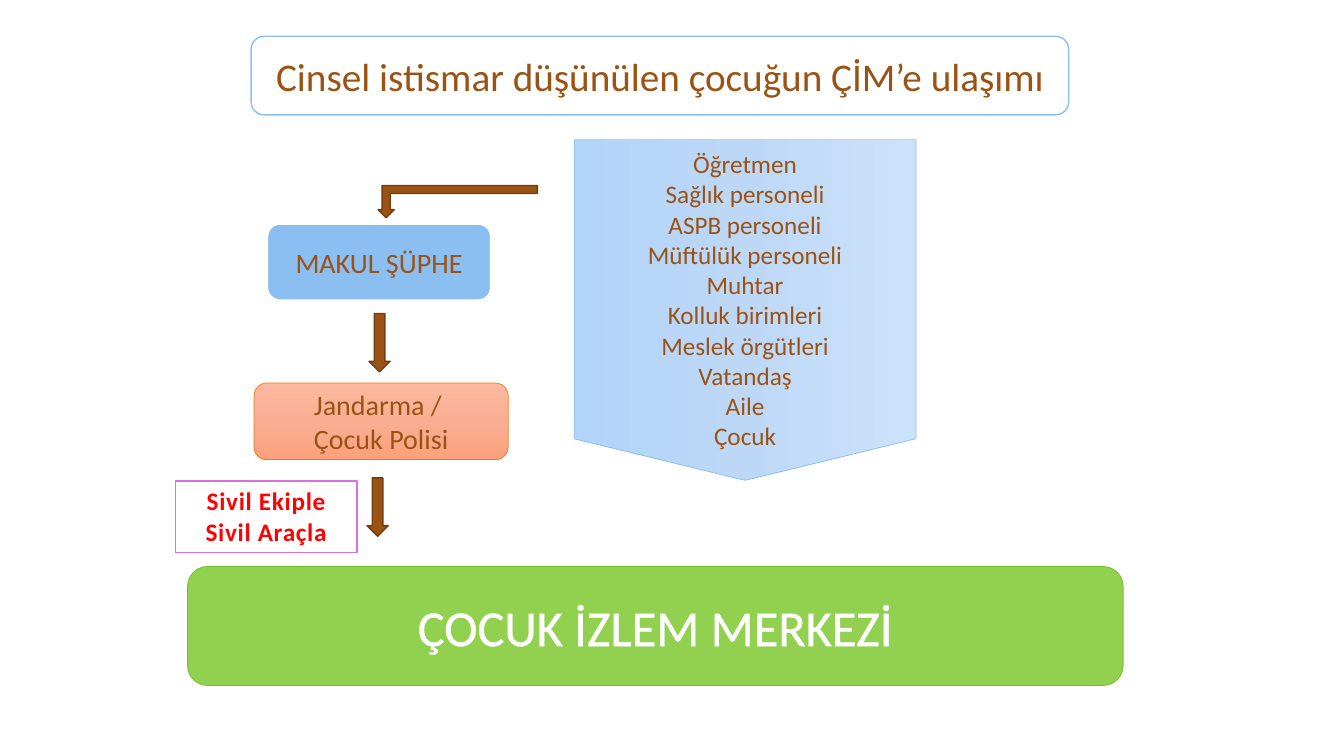
import copy

import pptx
import pptx.dml.color
import pptx.enum.shapes
import pptx.enum.text
import pptx.oxml
import pptx.oxml.ns
import pptx.util

Inches = pptx.util.Inches
Pt = pptx.util.Pt
Shape = pptx.enum.shapes.MSO_SHAPE
Anchor = pptx.enum.text.MSO_ANCHOR

# Content
TITLE = ["Cinsel istismar düşünülen çocuğun ÇİM’e ulaşımı"]
REPORTERS = [
    "Öğretmen", "Sağlık personeli", "ASPB personeli", "Müftülük personeli", "Muhtar",
    "Kolluk birimleri", "Meslek örgütleri", "Vatandaş", "Aile", "Çocuk",
]
SUSPICION = ["MAKUL ŞÜPHE"]
POLICE = ["Jandarma / ", "Çocuk Polisi"]
TRANSPORT = ["Sivil Ekiple", "Sivil Araçla"]
CENTRE = ["ÇOCUK İZLEM MERKEZİ"]

THEME = {
    "font": "Calibri",
    "brown": "9A5315", "dark brown": "723D10", "white": "FFFFFF", "red": "FF0000",
    "blue": "8BBEF1", "green": "92D050", "dark green": "6DC025",
    "orange": "F3771A", "violet": "DA6FDF",
    "blue fade": ("CCE2FA", "BDD8F7", "B2D4F9"),
    "orange fade": ("FBBAA0", "F9AE92", "FDA17D"),
    "title": 28, "step": 20, "list": 18, "centre": 36,
}


def rgb(name):
    return pptx.dml.color.RGBColor.from_string(THEME[name])


def fill_gradient(fill, colors):
    """Top-to-bottom gradient with three evenly spaced stops."""
    fill.gradient()
    fill.gradient_angle = 270
    first = fill.gradient_stops[0]._gs
    first.addnext(copy.deepcopy(first))
    for index, (stop, color) in enumerate(zip(fill.gradient_stops, colors)):
        stop.position = index / 2
        stop.color.rgb = pptx.dml.color.RGBColor.from_string(color)


def add_box(slide, preset, box, fill, line, width, rotation=0):
    shape = slide.shapes.add_shape(preset, *map(Inches, box))
    shape.shadow.inherit = False
    shape.rotation = rotation
    if isinstance(THEME[fill], tuple):
        fill_gradient(shape.fill, THEME[fill])
    else:
        shape.fill.solid()
        shape.fill.fore_color.rgb = rgb(fill)
    shape.line.color.rgb = rgb(line)
    shape.line.width = Pt(width)
    return shape


def write(shape, lines, size, color="brown", bold=False, anchor=Anchor.MIDDLE):
    frame = shape.text_frame
    frame.word_wrap = True
    frame.vertical_anchor = anchor
    frame.text = "\n".join(lines)
    for paragraph in frame.paragraphs:
        paragraph.alignment = pptx.enum.text.PP_ALIGN.CENTER
        for run in paragraph.runs:
            run.font.name = THEME["font"]
            run.font.size = Pt(THEME[size])
            run.font.bold = bold
            run.font.color.rgb = rgb(color)


def add_arrow(slide, preset, box, rotation=0):
    add_box(slide, preset, box, "brown", "dark brown", 1, rotation)


def main():
    presentation = pptx.Presentation()
    presentation.slide_width = Inches(13.33)
    presentation.slide_height = Inches(7.5)
    slide = presentation.slides.add_slide(presentation.slide_layouts[6])
    rounded = Shape.ROUNDED_RECTANGLE

    # Title
    title = add_box(slide, rounded, (2.49, 0.36, 8.11, 0.78), "white", "blue", 1)
    write(title, TITLE, "title")

    # People who report, in a pentagon pointing down with upright text
    reporters = add_box(slide, Shape.PENTAGON, (5.7, 1.38, 3.38, 3.39),
                        "blue fade", "blue", 0.5, 90)
    reporters.adjustments[0] = 0.122
    write(reporters, REPORTERS, "list")
    reporters.text_frame._txBody.bodyPr.set("vert", "vert270")

    # Steps
    suspicion = add_box(slide, rounded, (2.65, 2.22, 2.22, 0.76), "blue", "white", 1.5)
    write(suspicion, SUSPICION, "step")
    police = add_box(slide, rounded, (2.52, 3.8, 2.52, 0.76), "orange fade", "orange", 0.5)
    write(police, POLICE, "step")

    # Arrows between the steps
    add_arrow(slide, Shape.BENT_UP_ARROW, (3.75, 1.84, 1.58, 0.32), 180)
    for left, top in ((3.66, 3.11), (3.64, 4.74)):
        add_arrow(slide, Shape.DOWN_ARROW, (left, top, 0.21, 0.58))

    # Transport note with spaced letters
    transport = add_box(slide, Shape.RECTANGLE, (1.74, 4.77, 1.8, 0.71), "white", "violet", 1)
    write(transport, TRANSPORT, "list", "red", True, Anchor.TOP)
    for paragraph in transport.text_frame.paragraphs:
        paragraph.runs[0].font._element.set("spc", "50")

    # Destination with outlined letters
    centre = add_box(slide, rounded, (1.86, 5.62, 9.28, 1.18), "green", "dark green", 0.5)
    write(centre, CENTRE, "centre", "white")
    outline = pptx.oxml.parse_xml(
        f'<a:ln {pptx.oxml.ns.nsdecls("a")} w="{Pt(1.45)}"><a:solidFill>'
        f'<a:srgbClr val="{THEME["white"]}"/></a:solidFill></a:ln>')
    centre.text_frame.paragraphs[0].runs[0].font._element.insert(0, outline)

    presentation.save("out.pptx")


if __name__ == "__main__":
    main()
